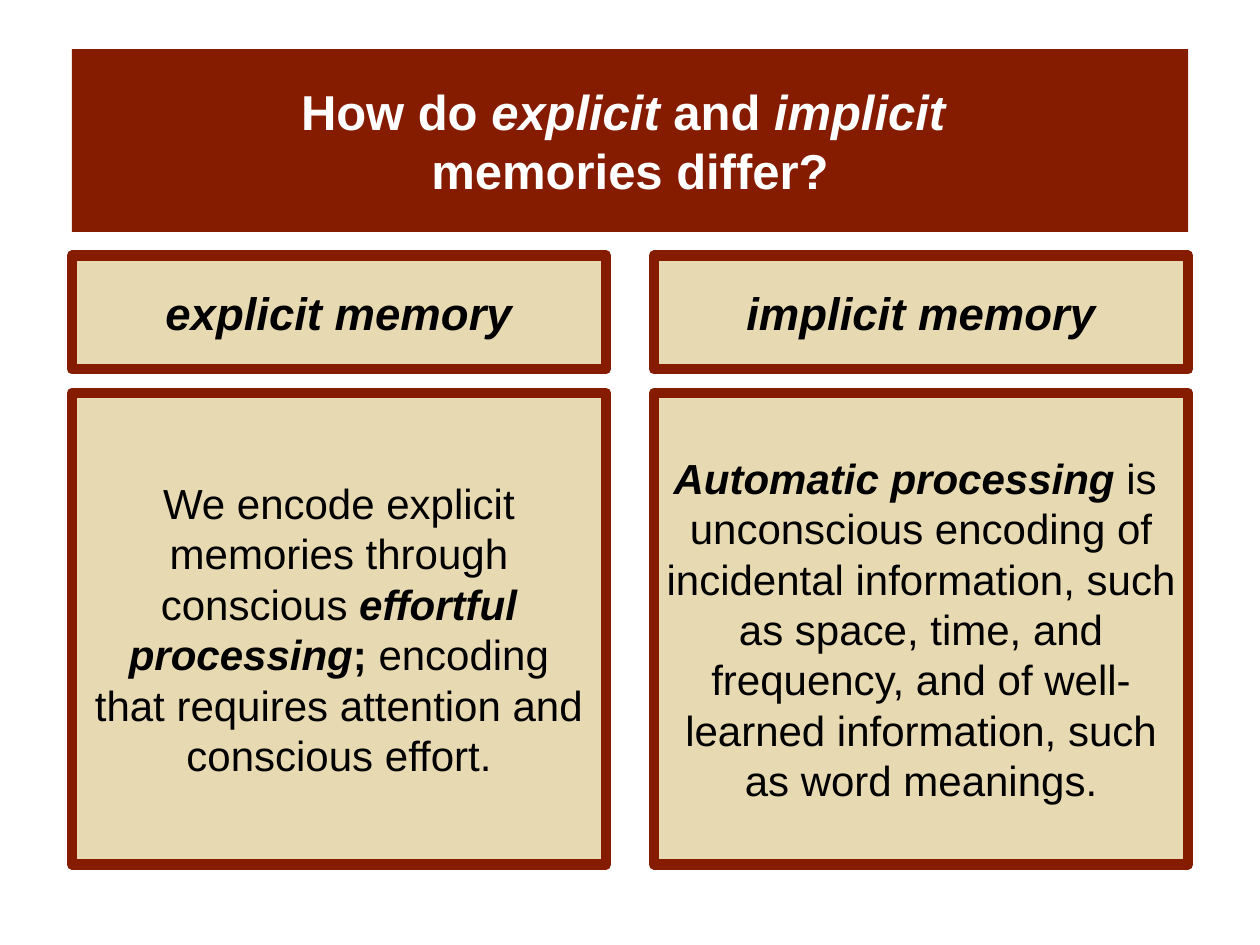
from pptx import Presentation
from pptx import util as u
from pptx.dml.color import RGBColor
from pptx.enum import shapes, text

COLORS = {"brick": "851C00", "sand": "E7D9B1", "white": "FFFFFF", "black": "000000"}
FONT = "Arial"
LEFT, TOP = 0.57, 0.39
COLUMN_WIDTH, COLUMN_GAP = 4.24, 0.38
ROW_HEIGHTS, ROW_GAP = [1.45, 0.9, 3.74], 0.19

# A paragraph is a list of (wording, style); "b" is bold, "i" is italic.
TITLE = [[("How do ", "b"), ("explicit ", "bi"), ("and", "b"), (" implicit ", "bi"),
          ("\n", ""), ("memories differ?", "b")]]
TOPICS = [
    ("explicit memory", [
        [("We encode explicit memories through conscious ", ""),
         ("effortful processing", "bi"), ("; ", "b"), ("encoding", "")],
        [("that requires attention and", "")],
        [("conscious effort.", "")],
    ]),
    ("implicit memory", [
        [("Automatic processing ", "bi"), ("is ", "")],
        [("unconscious encoding of", "")],
        [("incidental information, such as space, time, and frequency, "
          "and of well-learned information, such", "")],
        [("as word meanings.", "")],
    ]),
]


def rgb(name):
    return RGBColor.from_string(COLORS[name])


class SlideBuilder:
    def __init__(self, slide):
        self.slide = slide

    def panel(self, column, row, paragraphs, size, columns=1,
              fill="sand", line="brick", color="black"):
        """Draw a text panel on the grid, spanning the given columns."""
        left = LEFT + column * (COLUMN_WIDTH + COLUMN_GAP)
        top = TOP + sum(ROW_HEIGHTS[:row]) + row * ROW_GAP
        width = columns * COLUMN_WIDTH + (columns - 1) * COLUMN_GAP
        box = self.slide.shapes.add_shape(
            shapes.MSO_SHAPE.RECTANGLE, u.Inches(left), u.Inches(top),
            u.Inches(width), u.Inches(ROW_HEIGHTS[row]))
        box.shadow.inherit = False
        box.fill.solid()
        box.fill.fore_color.rgb = rgb(fill)
        if line:
            box.line.color.rgb = rgb(line)
            box.line.width = u.Pt(6)
        else:
            box.line.fill.background()
        self.fill_text(box.text_frame, paragraphs, size, color)

    def fill_text(self, frame, paragraphs, size, color):
        frame.word_wrap = True
        frame.vertical_anchor = text.MSO_ANCHOR.MIDDLE
        for index, spans in enumerate(paragraphs):
            para = frame.add_paragraph() if index else frame.paragraphs[0]
            para.alignment = text.PP_ALIGN.CENTER
            para.font.size = u.Pt(size)
            for wording, style in spans:
                if wording == "\n":
                    para.add_line_break()
                    continue
                span = para.add_run()
                span.text = wording
                span.font.name = FONT
                span.font.size = u.Pt(size)
                span.font.bold = "b" in style
                span.font.italic = "i" in style
                span.font.color.rgb = rgb(color)


def main():
    deck = Presentation()
    deck.slide_width, deck.slide_height = u.Inches(10), u.Inches(7.5)
    builder = SlideBuilder(deck.slides.add_slide(deck.slide_layouts[6]))
    builder.panel(0, 0, TITLE, 28, columns=2, fill="brick", line=None, color="white")
    for column, (heading, body) in enumerate(TOPICS):
        builder.panel(column, 1, [[(heading, "bi")]], 26)
        builder.panel(column, 2, body, 24)
    deck.save("out.pptx")


if __name__ == "__main__":
    main()
